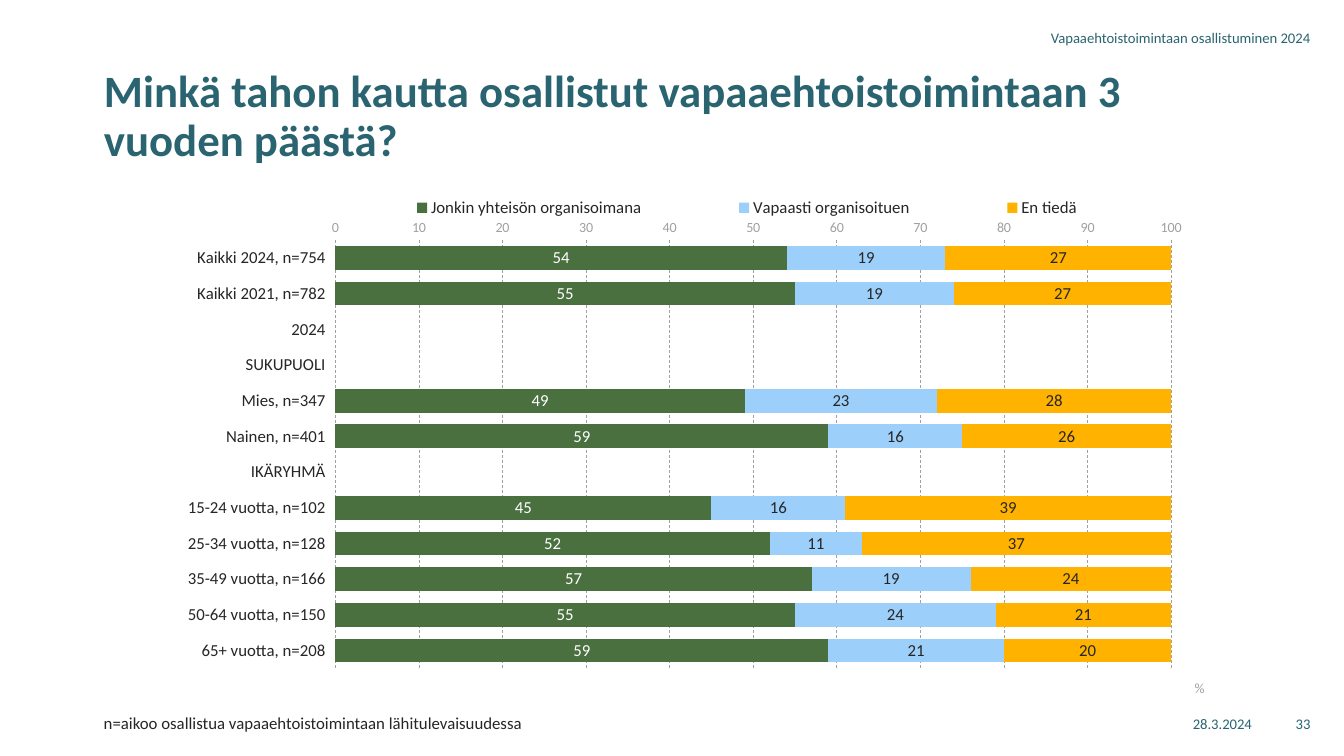
from lxml.etree import SubElement
from pptx import Presentation
from pptx.chart.data import CategoryChartData
from pptx.dml.color import RGBColor
from pptx.enum.chart import (XL_AXIS_CROSSES, XL_CHART_TYPE, XL_LABEL_POSITION,
                             XL_LEGEND_POSITION, XL_TICK_LABEL_POSITION, XL_TICK_MARK)
from pptx.enum.dml import MSO_LINE
from pptx.enum.text import MSO_ANCHOR, PP_ALIGN
from pptx.oxml.ns import qn
from pptx.util import Pt

TEAL = RGBColor(0x2A, 0x64, 0x71)
INK = RGBColor(0x26, 0x26, 0x26)
GREY = RGBColor(0xA0, 0xA0, 0xA0)
WHITE = RGBColor(0xFF, 0xFF, 0xFF)
GREEN = RGBColor(0x4A, 0x70, 0x40)
SKY = RGBColor(0x9C, 0xCF, 0xFA)
AMBER = RGBColor(0xFF, 0xB2, 0x00)

QUESTION = "Minkä tahon kautta osallistut vapaaehtoistoimintaan 3 vuoden päästä?"
BASE_NOTE = "n=aikoo osallistua vapaaehtoistoimintaan lähitulevaisuudessa"
PAGE_MARKS = [
    ("28.3.2024", 685.4, 502.6, 216),
    ("Vapaaehtoistoimintaan osallistuminen 2024", 619.2, 12.2, 324),
    ("33", 911.5, 502.6, 31.7),
]
ANSWERS = [
    ("Jonkin yhteisön organisoimana", GREEN, WHITE),
    ("Vapaasti organisoituen", SKY, INK),
    ("En tiedä", AMBER, INK),
]
NO_ANSWERS = (None, None, None)
GROUPS = [
    ("Kaikki 2024, n=754", (54, 19, 27)),
    ("Kaikki 2021, n=782", (55, 19, 27)),
    ("2024", NO_ANSWERS),
    ("SUKUPUOLI", NO_ANSWERS),
    ("Mies, n=347", (49, 23, 28)),
    ("Nainen, n=401", (59, 16, 26)),
    ("IKÄRYHMÄ", NO_ANSWERS),
    ("15-24 vuotta, n=102", (45, 16, 39)),
    ("25-34 vuotta, n=128", (52, 11, 37)),
    ("35-49 vuotta, n=166", (57, 19, 24)),
    ("50-64 vuotta, n=150", (55, 24, 21)),
    ("65+ vuotta, n=208", (59, 21, 20)),
]
LEFT, WIDTH = 67, 825.8


def style(font, size, color, bold=False):
    font.name = "Calibri"
    font.size = Pt(size)
    font.bold = bold
    font.color.rgb = color


def add_text(slide, text, left, top, width, height, size, color):
    box = slide.shapes.add_textbox(Pt(left), Pt(top), Pt(width), Pt(height))
    frame = box.text_frame
    frame.word_wrap = True
    frame.text = text
    style(frame.paragraphs[0].runs[0].font, size, color)
    return frame


def place(element, index, inner=False, **fractions):
    for old in element.findall(qn("c:layout")):
        element.remove(old)
    layout = element.makeelement(qn("c:layout"), {})
    element.insert(index, layout)
    manual = SubElement(layout, qn("c:manualLayout"))
    if inner:
        SubElement(manual, qn("c:layoutTarget"), val="inner")
    for key in ("x", "y"):
        SubElement(manual, qn(f"c:{key}Mode"), val="edge")
    for key, fraction in fractions.items():
        SubElement(manual, qn(f"c:{key}"), val=str(fraction))


def add_answer_chart(slide):
    chart_data = CategoryChartData(number_format="General")
    chart_data.categories = [group for group, _ in GROUPS]
    shares = zip(*(values for _, values in GROUPS))
    for (answer, _, _), values in zip(ANSWERS, shares):
        chart_data.add_series(answer, values)
    chart = slide.shapes.add_chart(
        XL_CHART_TYPE.BAR_STACKED, Pt(LEFT), Pt(123.8), Pt(WIDTH), Pt(378.7), chart_data).chart
    style(chart.font, 12, INK)
    chart.has_title = False

    plot = chart.plots[0]
    plot.gap_width = 50
    plot.overlap = 100
    plot.vary_by_categories = False
    for series, (_, fill_color, label_color) in zip(plot.series, ANSWERS):
        series.format.fill.solid()
        series.format.fill.fore_color.rgb = fill_color
        labels = series.data_labels
        labels.show_value = True
        labels.position = XL_LABEL_POSITION.CENTER
        labels.number_format = "#,##0"
        labels.number_format_is_linked = False
        style(labels.font, 12, label_color)

    groups_axis, share_axis = chart.category_axis, chart.value_axis
    for axis, size, color in ((groups_axis, 12, INK), (share_axis, 10, GREY)):
        axis.major_tick_mark = axis.minor_tick_mark = XL_TICK_MARK.NONE
        axis.format.line.fill.background()
        style(axis.tick_labels.font, size, color)
    groups_axis.reverse_order = True
    groups_axis.crosses = XL_AXIS_CROSSES.MAXIMUM
    groups_axis.tick_label_position = XL_TICK_LABEL_POSITION.LOW

    share_axis.minimum_scale, share_axis.maximum_scale = 0, 100.01
    share_axis.major_unit = 10
    share_axis.tick_labels.number_format = "General"
    share_axis.tick_labels.number_format_is_linked = False
    grid = share_axis.major_gridlines.format.line
    grid.color.rgb = GREY
    grid.width = Pt(0.5)
    grid.dash_style = MSO_LINE.DASH
    unit = share_axis.axis_title
    unit.text_frame.text = "%"
    style(unit.text_frame.paragraphs[0].runs[0].font, 10, GREY)

    chart.has_legend = True
    legend = chart.legend
    legend.position = XL_LEGEND_POSITION.TOP
    legend.include_in_layout = False
    style(legend.font, 12, INK)

    plot_area = plot._element.getparent()
    place(plot_area, 0, inner=True, x=0.209, y=0.126, w=0.723, h=0.808)
    place(unit._element, 1, x=0.95, y=0.95)
    place(legend._element, 1, x=0.2, y=0.03, w=0.73, h=0.07)


def main():
    deck = Presentation()
    deck.slide_width, deck.slide_height = Pt(960), Pt(540)
    slide = deck.slides.add_slide(deck.slide_layouts[5])

    title = slide.shapes.title
    title.left, title.top, title.width, title.height = Pt(LEFT), Pt(44.6), Pt(WIDTH), Pt(75.6)
    title.text_frame.text = QUESTION
    title.text_frame.vertical_anchor = MSO_ANCHOR.TOP
    heading = title.text_frame.paragraphs[0]
    heading.alignment = PP_ALIGN.LEFT
    heading.line_spacing = Pt(35)
    style(heading.runs[0].font, 32, TEAL, bold=True)

    add_answer_chart(slide)
    for text, left, top, width in PAGE_MARKS:
        mark = add_text(slide, text, left, top, width, 28.8, 10.5, TEAL)
        mark.vertical_anchor = MSO_ANCHOR.MIDDLE
        mark.paragraphs[0].alignment = PP_ALIGN.RIGHT
    note = add_text(slide, BASE_NOTE, LEFT, 506.9, 661, 20.2, 12, INK)
    note.paragraphs[0].line_spacing = 0.9

    deck.save("out.pptx")


if __name__ == "__main__":
    main()
